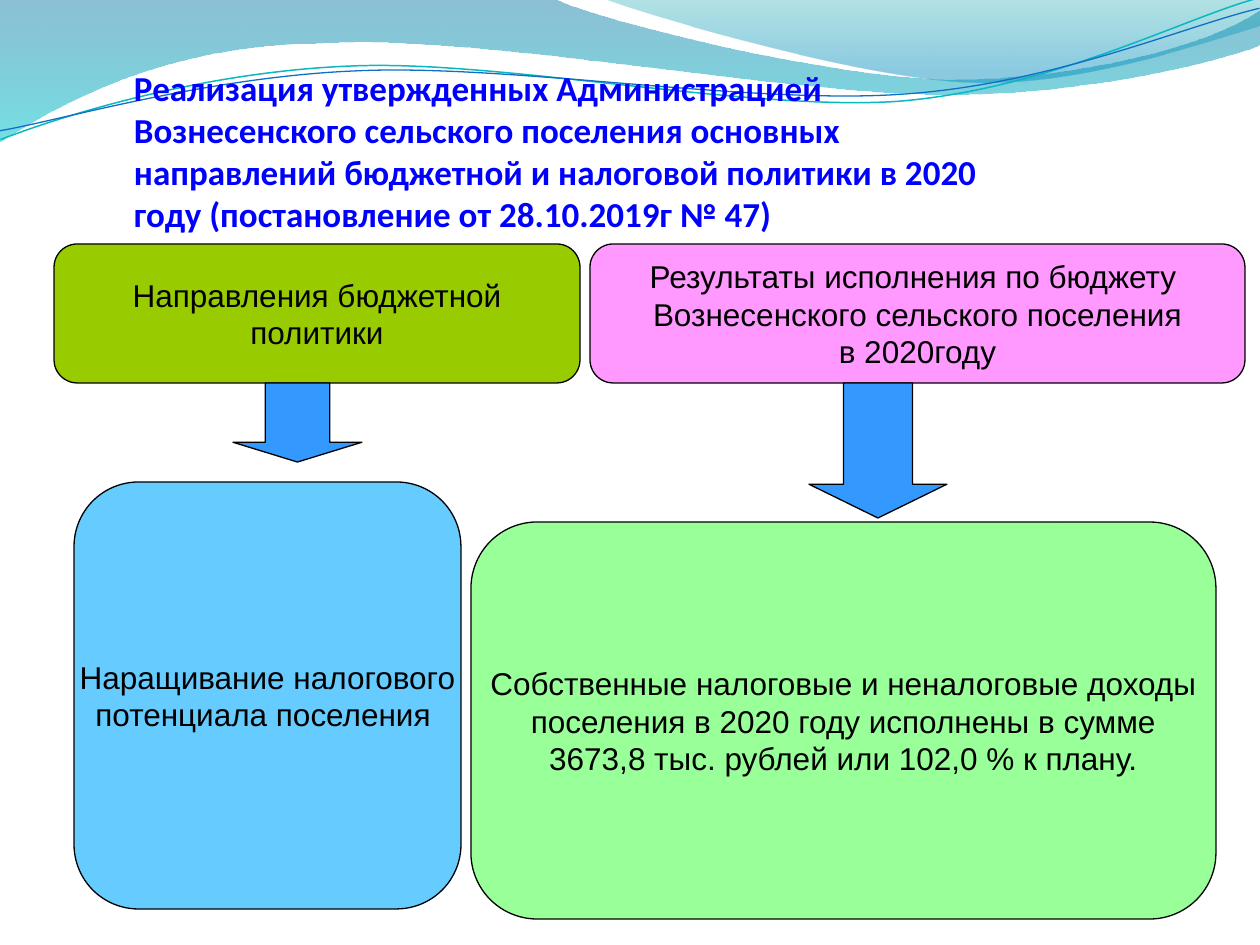
from lxml.etree import SubElement
from pptx import Presentation
from pptx.dml.color import RGBColor
from pptx.enum.shapes import MSO_SHAPE
from pptx.enum.text import MSO_ANCHOR, PP_ALIGN
from pptx.oxml import parse_xml
from pptx.oxml.ns import nsdecls, qn
from pptx.util import Pt

EMU_PER_PX = 914400 / 126

BANDS = [
    ((0, -1), [[(554, -1)],
               [(600, 21), (837, 79), (955, 79)],
               [(1075, 79), (1207, 47), (1260, 11)],
               [(1261, 45)],
               [(1239, 55), (1096, 96), (940, 94)],
               [(784, 94), (481, 35), (324, 43)],
               [(163, 44), (58, 105), (-1, 142)]],
     [(0, "0074A1", 45), (100, "00C6CF", 55)]),
    ((604, -1), [[(641, 14), (859, 78), (969, 82)],
                 [(1079, 87), (1211, 40), (1260, 26)],
                 [(1260, 0)]],
     [(0, "00A1A9", 30), (80, "008BBF", 45)]),
]
WAVES = [
    ((-2, 110), [[(58, 90), (199, 52), (350, 53)],
                 [(499, 53), (745, 117), (896, 114)],
                 [(1049, 109), (1184, 45), (1260, 28)]], "0AB8BF", 0.85),
    ((-2, 101), [[(57, 94), (207, 57), (357, 58)],
                 [(509, 58), (751, 111), (902, 107)],
                 [(1052, 104), (1187, 52), (1262, 38)]], "0F6FC6", 0.75),
]
WAVE_ROTATION = 357.3
TITLE = ("Реализация утвержденных Администрацией Вознесенского сельского поселения "
         "основных направлений бюджетной и налоговой политики в 2020 году "
         "(постановление от 28.10.2019г № 47)")
HEADERS = [
    ((54, 244, 526, 139), "99CC00", ["Направления бюджетной", "политики"]),
    ((590, 244, 655, 139), "FF99FF", ["Результаты исполнения по бюджету ",
                                      "Вознесенского сельского поселения", "в 2020году"]),
]
ARROWS = [(233, 383, 129, 79), (809, 383, 138, 135)]
DETAILS = [
    ((74, 482, 387, 427), "66CCFF", ["Наращивание налогового", "потенциала поселения "]),
    ((471, 522, 745, 397), "99FF99", ["Собственные налоговые и неналоговые доходы",
                                      "поселения в 2020 году исполнены в сумме",
                                      "3673,8 тыс. рублей или 102,0 % к плану."]),
]


def px(value):
    return round(value * EMU_PER_PX)


def color(hex_string):
    return RGBColor.from_string(hex_string)


def bend_segments(shape, segments):
    lines = iter(list(shape.element.spPr.iter(qn("a:lnTo"))))
    for segment in segments:
        pieces = [next(lines) for _ in segment]
        if len(pieces) == 3:
            curve = parse_xml(f"<a:cubicBezTo {nsdecls('a')}/>")
            pieces[0].addprevious(curve)
            for piece in pieces:
                curve.append(piece[0])
                piece.getparent().remove(piece)


def add_outline(slide, start, segments, close):
    points = [(px(x), px(y)) for segment in segments for x, y in segment]
    builder = slide.shapes.build_freeform(px(start[0]), px(start[1]))
    builder.add_line_segments(points, close=close)
    shape = builder.convert_to_shape()
    shape.shadow.inherit = False
    bend_segments(shape, segments)
    return shape


def add_band(slide, start, segments, stops):
    shape = add_outline(slide, start, segments, True)
    shape.line.fill.background()
    shape.fill.gradient()
    shape.fill.gradient_angle = 270
    for stop, (position, hex_string, _) in zip(shape.fill.gradient_stops, stops):
        stop.position = position / 100
        stop.color.rgb = color(hex_string)
    for node, (_, _, opacity) in zip(shape.element.spPr.iter(qn("a:srgbClr")), stops):
        SubElement(node, qn("a:alpha"), val=str(opacity * 1000))


def add_wave(slide, start, segments, hex_string, width):
    shape = add_outline(slide, start, segments, False)
    shape.rotation = WAVE_ROTATION
    shape.fill.background()
    style_line(shape, hex_string, width)


def style_line(shape, hex_string, width):
    shape.line.color.rgb = color(hex_string)
    shape.line.width = Pt(width)


def style_font(font, name, size, hex_string, bold=False):
    font.name = name
    font.size = Pt(size)
    font.bold = bold
    font.color.rgb = color(hex_string)


def add_title(slide):
    frame = slide.shapes.add_textbox(*map(px, (134, 27, 907, 208))).text_frame
    frame.word_wrap = True
    frame.vertical_anchor = MSO_ANCHOR.BOTTOM
    frame.margin_left = frame.margin_right = frame.margin_bottom = 0
    frame.text = TITLE
    style_font(frame.paragraphs[0].runs[0].font, "Calibri", 20, "0000FF", True)


def add_filled(slide, kind, box, fill):
    shape = slide.shapes.add_shape(kind, *map(px, box))
    shape.shadow.inherit = False
    shape.fill.solid()
    shape.fill.fore_color.rgb = color(fill)
    style_line(shape, "000000", 0.75)
    return shape


def add_box(slide, box, fill, lines):
    frame = add_filled(slide, MSO_SHAPE.FLOWCHART_ALTERNATE_PROCESS, box, fill).text_frame
    frame.word_wrap = False
    frame.vertical_anchor = MSO_ANCHOR.MIDDLE
    frame.text = "\n".join(lines)
    for paragraph in frame.paragraphs:
        paragraph.alignment = PP_ALIGN.CENTER
        style_font(paragraph.runs[0].font, "Arial", 18, "000000")


def add_arrow(slide, box):
    arrow = add_filled(slide, MSO_SHAPE.DOWN_ARROW, box, "3399FF")
    arrow.adjustments[1] = 0.25


def main():
    presentation = Presentation()
    presentation.slide_width, presentation.slide_height = px(1260), px(945)
    slide = presentation.slides.add_slide(presentation.slide_layouts[6])
    for band in BANDS:
        add_band(slide, *band)
    for wave in WAVES:
        add_wave(slide, *wave)
    add_title(slide)
    for header in HEADERS:
        add_box(slide, *header)
    for arrow in ARROWS:
        add_arrow(slide, arrow)
    for detail in DETAILS:
        add_box(slide, *detail)
    presentation.save("out.pptx")


if __name__ == "__main__":
    main()
